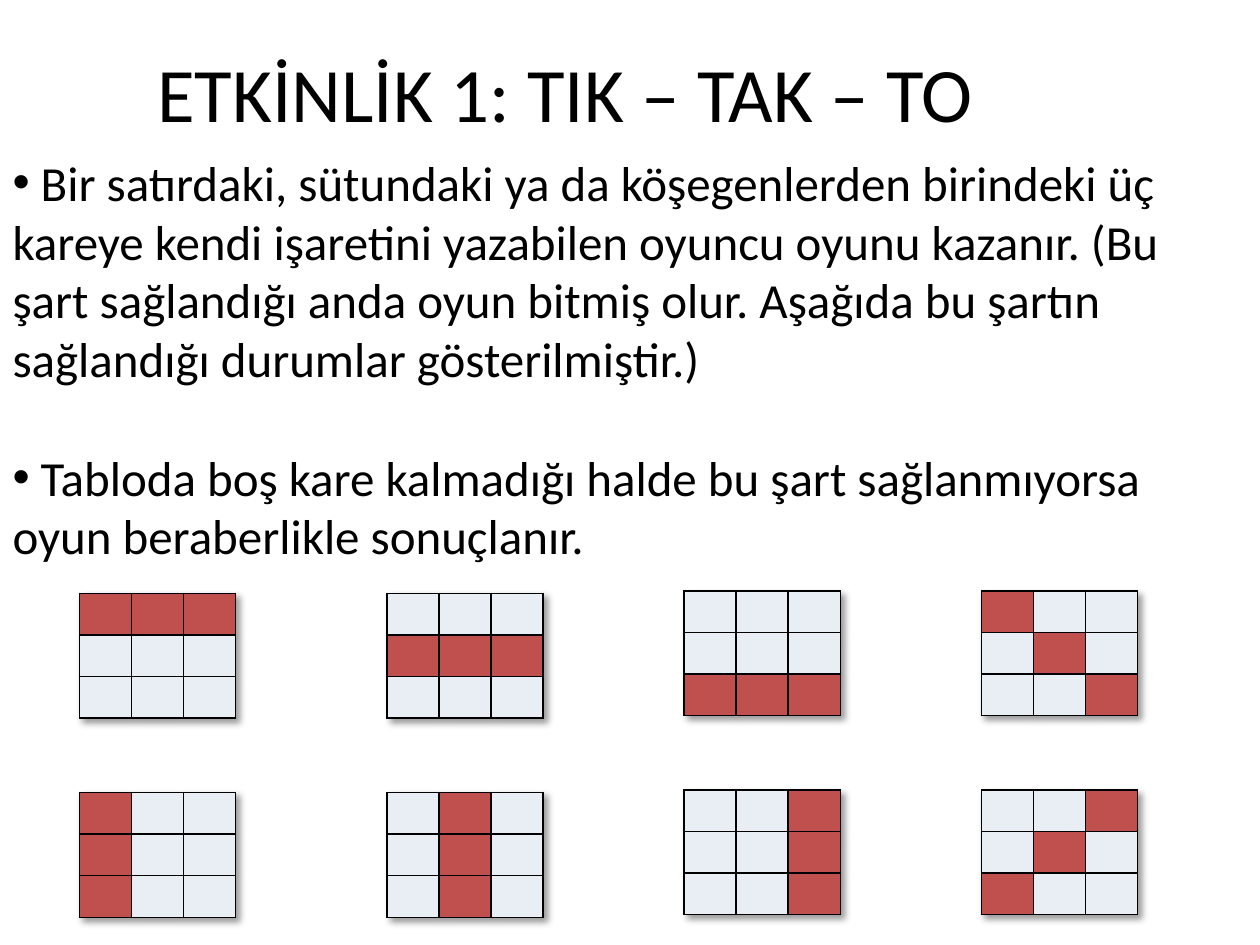
"""Build the tic-tac-toe activity slide with its eight winning boards."""
from lxml import etree
from pptx import Presentation
from pptx import util as u
from pptx.dml.color import RGBColor
from pptx.enum import text
from pptx.oxml import parse_xml

THEME = {
    "font": "Calibri", "title": 44, "body": 28,
    "ink": "000000", "empty": "E9EDF4", "won": "C0504D",
}
NS = "http://schemas.openxmlformats.org/drawingml/2006/main"
BORDER = (
    '<a:{side} xmlns:a="{ns}" w="12700"><a:solidFill><a:srgbClr val="{ink}"/>'
    "</a:solidFill></a:{side}>"
)
SHADOW = (
    f'<a:effectLst xmlns:a="{NS}"><a:outerShdw blurRad="50800" dist="38100" dir="2700000" '
    'algn="tl" rotWithShape="0"><a:srgbClr val="000000"><a:alpha val="40000"/></a:srgbClr>'
    "</a:outerShdw></a:effectLst>"
)


def place(shape, left, top, width, height):
    shape.left, shape.top = u.Inches(left), u.Inches(top)
    shape.width, shape.height = u.Inches(width), u.Inches(height)


def write(para, words, size, align):
    para.alignment = align
    span = para.add_run()
    span.text = words
    span.font.name = THEME["font"]
    span.font.size = u.Pt(size)
    span.font.color.rgb = RGBColor.from_string(THEME["ink"])


deck = Presentation()
deck.slide_width, deck.slide_height = u.Inches(10), u.Inches(7.5)
page = deck.slides.add_slide(deck.slide_layouts[1])

title, body = page.placeholders
place(title, 0.5, 0.3, 8.12, 0.85)
place(body, 0, 1.15, 9.57, 3.39)
for box in (title, body):
    box.text_frame.word_wrap = True
    box.text_frame.auto_size = text.MSO_AUTO_SIZE.NONE
    box.text_frame.vertical_anchor = text.MSO_ANCHOR.MIDDLE

write(title.text_frame.paragraphs[0], "ETKİNLİK 1: TIK – TAK – TO ",
      THEME["title"], text.PP_ALIGN.CENTER)

rules = [
    " Bir satırdaki, sütundaki ya da köşegenlerden birindeki üç kareye kendi işaretini "
    "yazabilen oyuncu oyunu kazanır. (Bu şart sağlandığı anda oyun bitmiş olur. "
    "Aşağıda bu şartın sağlandığı durumlar gösterilmiştir.)",
    " Tabloda boş kare kalmadığı halde bu şart sağlanmıyorsa oyun beraberlikle sonuçlanır.",
]
for index, rule in enumerate(rules):
    para = body.text_frame.paragraphs[0] if index == 0 else body.text_frame.add_paragraph()
    write(para, rule, THEME["body"], text.PP_ALIGN.LEFT)
    para.space_before = u.Pt(34 * index)
    layout = para._p.get_or_add_pPr()
    layout.set("marL", "0")
    layout.set("indent", "0")
    etree.SubElement(layout, f"{{{NS}}}buFont").set("typeface", "Arial")
    etree.SubElement(layout, f"{{{NS}}}buChar").set("char", "•")

size = 3
lines = [
    [[(line, step) for step in range(size)] for line in range(size)]
    + [[(step, step) for step in range(size)]],
    [[(step, line) for step in range(size)] for line in range(size)]
    + [[(step, size - 1 - step) for step in range(size)]],
]
columns = [(0.63, 4.71), (3.07, 4.71), (5.43, 4.69), (7.79, 4.69)]
row_pitch = 1.58
for band, wins in enumerate(lines):
    for (left, top), win in zip(columns, wins):
        frame = page.shapes.add_table(
            size, size, u.Inches(left), u.Inches(top + band * row_pitch),
            u.Inches(1.24), u.Inches(0.99))
        board = frame.table
        board.first_row = board.horz_banding = False
        board._tbl.tblPr.insert(0, parse_xml(SHADOW))
        for row in range(size):
            for column in range(size):
                cell = board.cell(row, column)
                cell.margin_top = cell.margin_bottom = 0
                for side in ("lnL", "lnR", "lnT", "lnB"):
                    cell._tc.get_or_add_tcPr().append(
                        parse_xml(BORDER.format(side=side, ns=NS, ink=THEME["ink"])))
                colour = THEME["won" if (row, column) in win else "empty"]
                cell.fill.solid()
                cell.fill.fore_color.rgb = RGBColor.from_string(colour)

deck.save("out.pptx")
